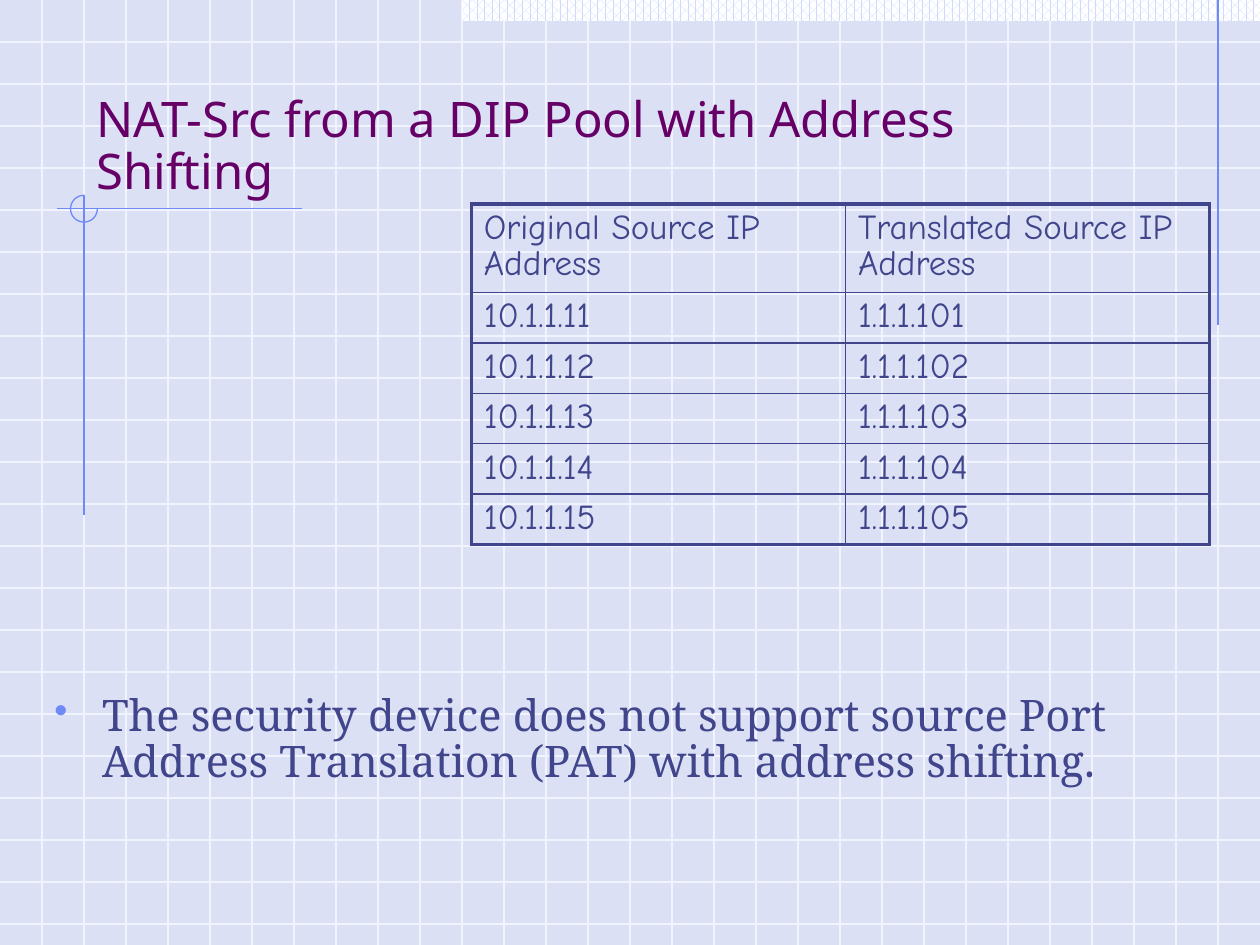
from dataclasses import dataclass

from lxml import etree
from pptx import Presentation, util as u
from pptx.dml.color import RGBColor
from pptx.enum import dml, shapes, text
from pptx.oxml.ns import qn


@dataclass(frozen=True)
class Theme:
    background: str = "DBE0F5"
    grid: str = "F1F4FE"
    pattern: str = "CFDBFD"
    white: str = "FFFFFF"
    accent: str = "6F89F7"
    title: str = "660066"
    ink: str = "40458C"
    title_size: float = 28
    body_size: float = 24.8
    table_size: float = 20
    hairline: float = 0.75
    inner_border: float = 1
    outer_border: float = 2.25


THEME = Theme()
COLUMNS, ROWS = 30, 22.5
HEADINGS = ("Original Source IP Address", "Translated Source IP Address")
ADDRESSES = [(f"10.1.1.{host}", f"1.1.1.{host + 90}") for host in range(11, 16)]


def rgb(color):
    return RGBColor.from_string(color)


def add_element(parent, tag, **attributes):
    return etree.SubElement(parent, qn(tag), attributes)


class GridSlide:
    """Draws on one slide; lengths count grid squares of a third of an inch."""

    def __init__(self, presentation, theme):
        self.theme = theme
        self.square = presentation.slide_width / COLUMNS
        self.slide = presentation.slides.add_slide(presentation.slide_layouts[6])
        fill = self.slide.background.fill
        fill.solid()
        fill.fore_color.rgb = rgb(theme.background)

    def lengths(self, *squares):
        return [u.Emu(round(count * self.square)) for count in squares]

    def stroke(self, shape, color):
        shape.line.color.rgb = rgb(color)
        shape.line.width = u.Pt(self.theme.hairline)

    def line(self, start, end, color):
        connector = self.slide.shapes.add_connector(
            shapes.MSO_CONNECTOR.STRAIGHT, *self.lengths(*start, *end))
        self.stroke(connector, color)
        add_element(connector._element.spPr, "a:effectLst")

    def patterned_band(self, *box):
        band = self.slide.shapes.add_shape(
            shapes.MSO_SHAPE.RECTANGLE, *self.lengths(*box))
        band.shadow.inherit = False
        band.line.fill.background()
        band.fill.patterned()
        band.fill.pattern = dml.MSO_PATTERN.PERCENT_60
        band.fill.fore_color.rgb = rgb(self.theme.pattern)
        band.fill.back_color.rgb = rgb(self.theme.white)

    def three_quarter_arc(self, *box):
        arc = self.slide.shapes.add_shape(
            shapes.MSO_SHAPE.ARC, *self.lengths(*box))
        arc.shadow.inherit = False
        arc.fill.background()
        arc.adjustments[0], arc.adjustments[1] = 0, 162
        self.stroke(arc, self.theme.accent)

    def add_wording(self, frame, wording, font, spacing):
        paragraph = frame.paragraphs[0]
        run = paragraph.add_run()
        run.text = wording
        for target, values in ((run.font, font), (paragraph, spacing)):
            for name, value in values.items():
                setattr(target, name, value)
        run.font.color.rgb = rgb(self.theme.ink)
        return run

    def text_box(self, box, wording, font, anchor, bullet=False):
        frame = self.slide.shapes.add_textbox(*self.lengths(*box)).text_frame
        frame.word_wrap = True
        frame.vertical_anchor = anchor
        if bullet:
            self.bullet(frame.paragraphs[0])
        return self.add_wording(frame, wording, font, {"line_spacing": 0.88})

    def bullet(self, paragraph):
        properties = paragraph._p.get_or_add_pPr()
        indent = u.Inches(0.38)
        properties.set("marL", str(indent))
        properties.set("indent", str(-indent))
        color = add_element(properties, "a:buClr")
        add_element(color, "a:srgbClr", val=self.theme.accent)
        add_element(properties, "a:buSzPct", val="90000")
        add_element(properties, "a:buChar", char="•")

    def border(self, cell, widths):
        """Widths run left, right, top, bottom."""
        properties = cell._tc.get_or_add_tcPr()
        for index, (side, width) in enumerate(zip("LRTB", widths)):
            edge = etree.Element(qn(f"a:ln{side}"), w=str(u.Pt(width)))
            fill = add_element(edge, "a:solidFill")
            add_element(fill, "a:srgbClr", val=self.theme.ink)
            properties.insert(index, edge)

    def table(self, left, top, widths, heights, records):
        box = self.lengths(left, top, sum(widths), sum(heights))
        table = self.slide.shapes.add_table(len(heights), len(widths), *box).table
        table.first_row = table.horz_banding = False
        for column, width in zip(table.columns, self.lengths(*widths)):
            column.width = width
        for row, height in zip(table.rows, self.lengths(*heights)):
            row.height = height
        font = {"name": "Comic Neue", "size": u.Pt(self.theme.table_size)}
        spacing = {"line_spacing": 0.9, "space_after": u.Pt(3)}
        last_row, last_column = len(heights) - 1, len(widths) - 1
        for i, record in enumerate(records):
            for j, wording in enumerate(record):
                cell = table.cell(i, j)
                cell.fill.background()
                self.add_wording(cell.text_frame, wording, font, spacing)
                outer = (j == 0, j == last_column, i == 0, i == last_row)
                self.border(cell, [
                    self.theme.outer_border if edge else self.theme.inner_border
                    for edge in outer])


def draw_backdrop(page):
    for row in range(1, int(ROWS) + 1):
        page.line((0, row), (COLUMNS, row), THEME.grid)
    for column in range(1, COLUMNS):
        page.line((column, 0), (column, ROWS), THEME.grid)
    page.patterned_band(11, 0, 19, 0.5)
    for start, end in (((29, 0), (29, 7.74)),
                       ((7.2, 4.97), (1.35, 4.97)),
                       ((2, 4.65), (2, 12.27))):
        page.line(start, end, THEME.accent)
    page.three_quarter_arc(1.68, 4.65, 0.64, 0.64)


def main():
    presentation = Presentation()
    presentation.slide_width = u.Inches(10)
    presentation.slide_height = u.Inches(7.5)
    page = GridSlide(presentation, THEME)
    draw_backdrop(page)
    title = page.text_box(
        (2, 1, 25.2, 3.9), "NAT-Src from a DIP Pool with Address Shifting",
        {"name": "Noto Sans", "size": u.Pt(THEME.title_size)},
        text.MSO_ANCHOR.BOTTOM)
    title.font.color.rgb = rgb(THEME.title)
    page.text_box(
        (1, 16.4, 27, 3.1),
        "The security device does not support source Port Address Translation "
        "(PAT) with address shifting.",
        {"name": "Noto Serif", "size": u.Pt(THEME.body_size)},
        text.MSO_ANCHOR.TOP, bullet=True)
    page.table(11.22, 4.86, (8.91, 8.67), [2.02] + [1.17] * len(ADDRESSES),
               [HEADINGS, *ADDRESSES])
    presentation.save("out.pptx")


if __name__ == "__main__":
    main()
